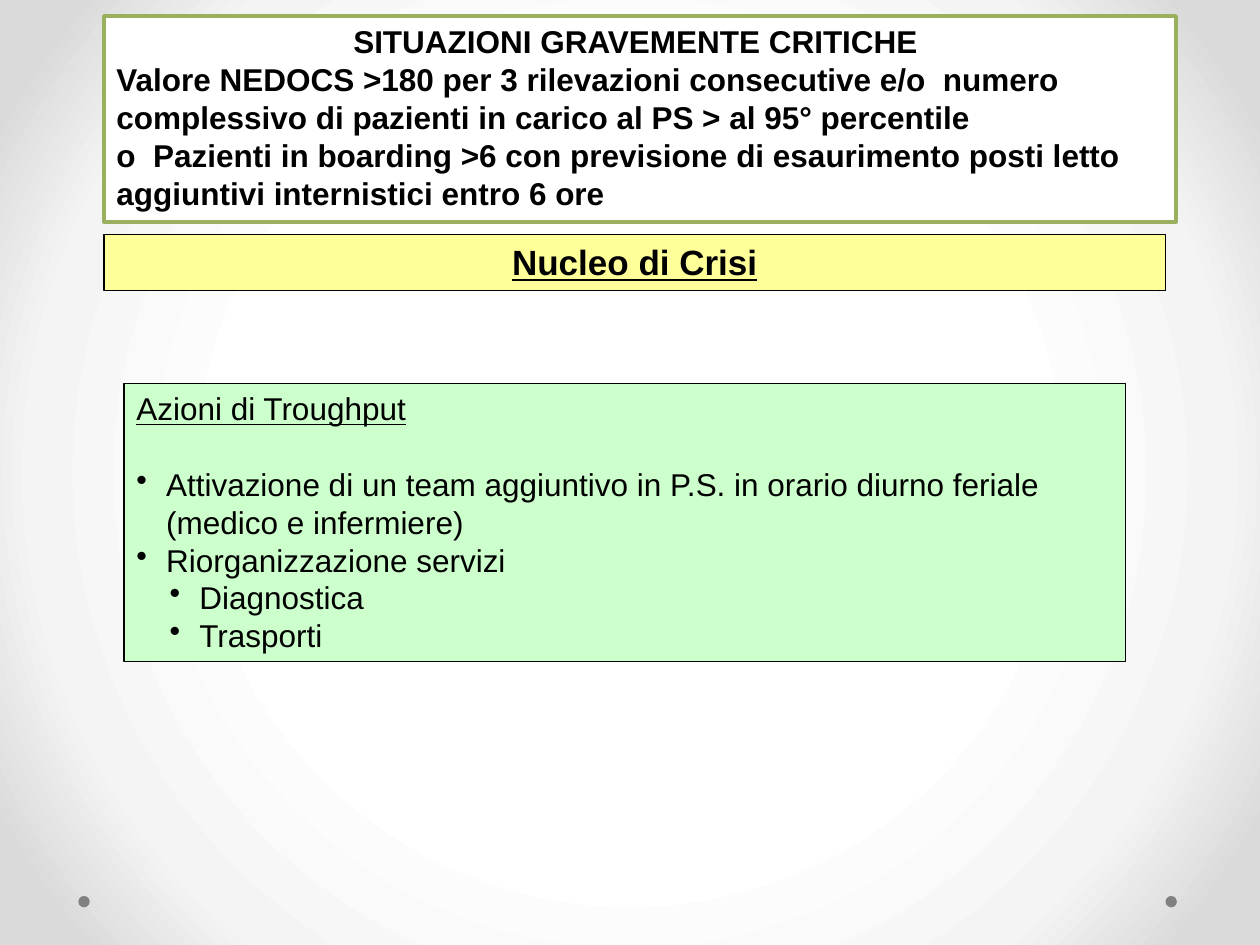
from lxml import etree
from pptx import Presentation
from pptx.dml.color import RGBColor
from pptx.enum import shapes, text
from pptx.oxml import ns
from pptx.util import Pt


def rgb(value):
    return RGBColor.from_string(value)


class Deck:
    font = "Arial"
    ink = "000000"
    size = 18
    hang = 17

    def __init__(self, width, height):
        self.prs = Presentation()
        self.prs.slide_width, self.prs.slide_height = Pt(width), Pt(height)
        self.s = self.prs.slides.add_slide(self.prs.slide_layouts[5])

    def background(self, stops):
        fill = self.s.background.fill
        fill.gradient()
        grad = self.s.background._cSld.find(".//" + ns.qn("a:gradFill"))
        for child in list(grad):
            grad.remove(child)
        gs_list = etree.SubElement(grad, ns.qn("a:gsLst"))
        for position, color in stops:
            gs = etree.SubElement(gs_list, ns.qn("a:gs"), pos=str(position * 1000))
            etree.SubElement(gs, ns.qn("a:srgbClr"), val=color)
        circle = etree.SubElement(grad, ns.qn("a:path"), {"path": "circle"})
        etree.SubElement(circle, ns.qn("a:fillToRect"),
                         {side: "50000" for side in "ltrb"})

    def dot(self, left, top, size, color):
        sp = self.s.shapes.add_shape(
            shapes.MSO_SHAPE.OVAL, Pt(left), Pt(top), Pt(size), Pt(size))
        sp.shadow.inherit = False
        sp.fill.solid()
        sp.fill.fore_color.rgb = rgb(color)
        sp.line.fill.background()

    def frame(self, sp, box, fill, line, weight):
        sp.left, sp.top, sp.width, sp.height = map(Pt, box)
        sp.fill.solid()
        sp.fill.fore_color.rgb = rgb(fill)
        sp.line.color.rgb = rgb(line)
        sp.line.width = Pt(weight)
        tf = sp.text_frame
        tf.word_wrap = True
        tf.auto_size = text.MSO_AUTO_SIZE.NONE
        tf.vertical_anchor = text.MSO_ANCHOR.TOP
        return tf

    def title(self, box, words, fill, line="000000", weight=0.75):
        tf = self.frame(self.s.shapes.title, box, fill, line, weight)
        self.paragraph(tf, words, size=20, bold=True, underline=True, center=True)

    def panel(self, box, fill, line="000000", weight=0.75):
        sp = self.s.shapes.add_textbox(*map(Pt, box))
        return self.frame(sp, box, fill, line, weight)

    def paragraph(self, tf, words, size=None, bold=False, underline=False,
                  center=False, before=0):
        p = tf.paragraphs[0] if not tf.text else tf.add_paragraph()
        p.text = words
        p.alignment = text.PP_ALIGN.CENTER if center else text.PP_ALIGN.LEFT
        p.line_spacing = 1.0
        p.space_before = Pt(before)
        p.font.name = self.font
        p.font.size = Pt(size or self.size)
        p.font.bold = bold
        p.font.underline = underline
        p.font.color.rgb = rgb(self.ink)
        return p

    def bullet(self, tf, words, level=0, before=0):
        p = self.paragraph(tf, words, before=before)
        p.level = level
        props = p._p.get_or_add_pPr()
        props.set("marL", str(Pt((self.hang, 36)[level])))
        props.set("indent", str(-Pt(self.hang)))
        mark = etree.Element(ns.qn("a:buChar"), char="•")
        props.find(ns.qn("a:defRPr")).addprevious(mark)


def main():
    deck = Deck(720, 540)
    deck.background([(50, "FFFFFF"), (76, "F4F4F4"), (92, "DADADA")])
    for left in (666, 44.8):
        deck.dot(left, 512, 6.5, "808080")

    criteria = deck.panel((59.5, 9.2, 612.5, 117.5), "FFFFFF", "9BB05E", 2.25)
    deck.paragraph(criteria, "SITUAZIONI GRAVEMENTE CRITICHE ", bold=True, center=True)
    for words in (
        "Valore NEDOCS >180 per 3 rilevazioni consecutive e/o  numero "
        "complessivo di pazienti in carico al PS > al 95° percentile",
        "o  Pazienti in boarding >6 con previsione di esaurimento posti letto "
        "aggiuntivi internistici entro 6 ore",
    ):
        deck.paragraph(criteria, words, bold=True)

    deck.title((59.5, 134, 606.5, 32), "Nucleo di Crisi", "FFFF99")

    actions = deck.panel((70.8, 219, 572.5, 159), "CCFFCC")
    deck.paragraph(actions, "Azioni di Troughput", underline=True)
    for words, level, before in (
        ("Attivazione di un team aggiuntivo in P.S. in orario diurno feriale "
         "(medico e infermiere)", 0, 21.6),
        ("Riorganizzazione servizi", 0, 0),
        ("Diagnostica", 1, 0),
        ("Trasporti", 1, 0),
    ):
        deck.bullet(actions, words, level, before)

    deck.prs.save("out.pptx")


if __name__ == "__main__":
    main()
